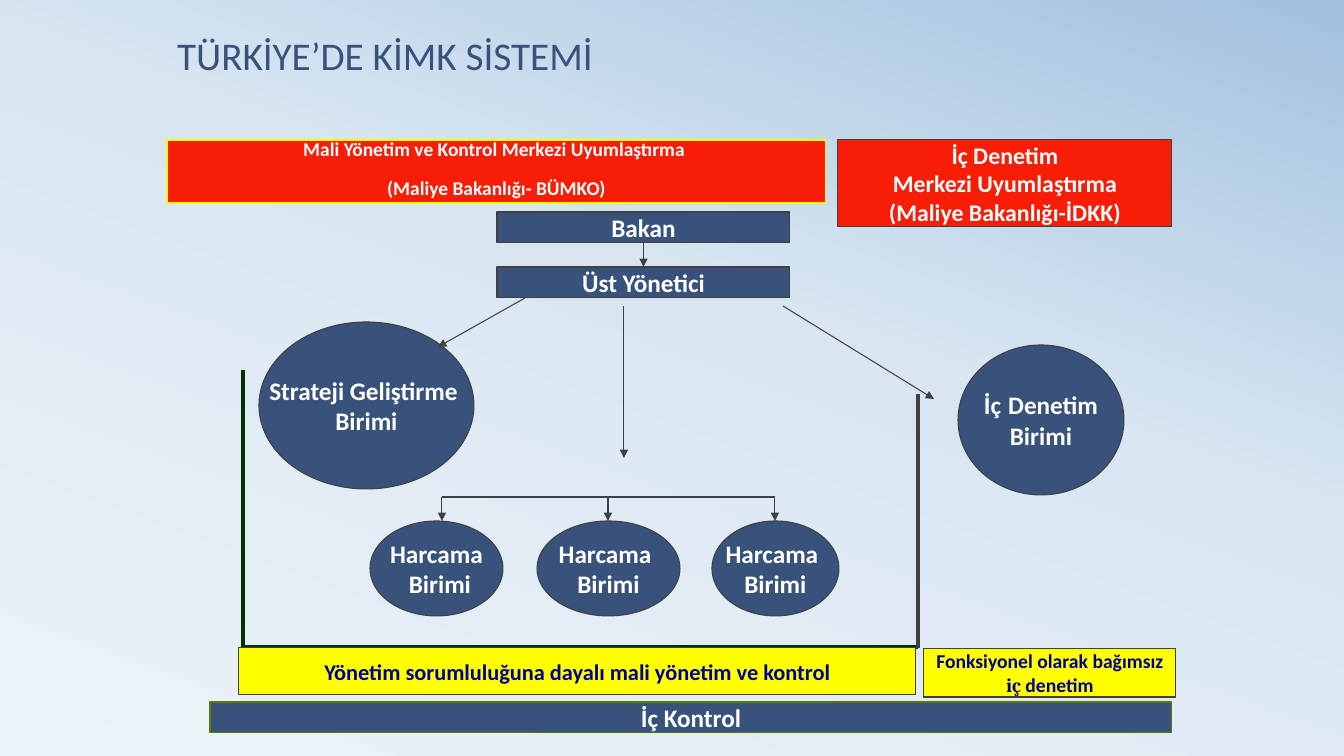
from copy import deepcopy

from lxml import etree
from pptx import Presentation
from pptx.dml.color import RGBColor
from pptx.enum import shapes, text
from pptx.oxml.ns import qn
from pptx.util import Pt

PX = 12192000 / 1344
NAVY, RED, YELLOW = "39527B", "F81D06", "FFFF00"
GREY, GREEN, INK, WHITE = "404040", "003300", "000099", "FFFFFF"
SPACE = (" ", 14, "Comic Neue")


def px(*lengths):
    return [round(length * PX) for length in lengths]


def paint(color, value):
    color.rgb = RGBColor.from_string(value)


class Chart:
    """Draws the organisation chart on one slide in one style."""

    font = "Calibri"

    def __init__(self, presentation):
        self.slide = presentation.slides.add_slide(presentation.slide_layouts[1])

    def background(self, stops, angle):
        fill = self.slide.background.fill
        fill.gradient()
        fill.gradient_angle = angle
        stop_list = self.slide.element.find(".//" + qn("a:gsLst"))
        while len(stop_list) < len(stops):
            stop_list.append(deepcopy(stop_list[0]))
        for stop, (position, color) in zip(fill.gradient_stops, stops):
            stop.position = position
            paint(stop.color, color)

    def place(self, shape, bounds):
        shape.left, shape.top, shape.width, shape.height = px(*bounds)

    def style(self, shape, fill, line):
        shape.fill.solid()
        paint(shape.fill.fore_color, fill)
        paint(shape.line.color, line)
        shape.line.width = Pt(0.75)

    def add_lines(self, frame, lines, size, color, bold=True, align=text.PP_ALIGN.CENTER):
        """Each line is a string or a list of (text, size, font) runs."""
        for number, line in enumerate(lines):
            paragraph = frame.add_paragraph() if number else frame.paragraphs[0]
            paragraph.alignment = align
            runs = [(line, size, self.font)] if isinstance(line, str) else line
            for words, points, font in runs:
                run = paragraph.add_run()
                run.text = words
                run.font.name, run.font.size, run.font.bold = font, Pt(points), bold
                paint(run.font.color, color)

    def title(self, bounds, words):
        shape = self.slide.shapes.title
        self.place(shape, bounds)
        frame = shape.text_frame
        frame.auto_size = text.MSO_AUTO_SIZE.NONE
        frame.vertical_anchor = text.MSO_ANCHOR.BOTTOM
        self.add_lines(frame, [words], 28, NAVY, False, text.PP_ALIGN.LEFT)
        frame.paragraphs[0].line_spacing = 0.8

    def body(self, bounds, lines):
        shape = self.slide.placeholders[1]
        self.place(shape, bounds)
        self.style(shape, RED, YELLOW)
        frame = shape.text_frame
        frame.auto_size = text.MSO_AUTO_SIZE.NONE
        frame.vertical_anchor = text.MSO_ANCHOR.TOP
        self.add_lines(frame, lines, 13.9, WHITE)
        for paragraph in frame.paragraphs:
            paragraph.line_spacing = 0.6
            paragraph.space_before = Pt(18)
            properties = paragraph._p.get_or_add_pPr()
            indent, = px(30)
            properties.set("marL", str(indent))
            properties.set("indent", str(-indent))
            etree.SubElement(properties, qn("a:buNone"))

    def node(self, kind, bounds, lines, fill=NAVY, color=WHITE, size=18, line=GREY):
        shape = self.slide.shapes.add_shape(kind, *px(*bounds))
        shape.shadow.inherit = False
        self.style(shape, fill, line)
        frame = shape.text_frame
        frame.word_wrap = False
        frame.vertical_anchor = text.MSO_ANCHOR.MIDDLE
        self.add_lines(frame, lines, size, color)
        return shape

    def box(self, *args, **options):
        return self.node(shapes.MSO_SHAPE.RECTANGLE, *args, **options)

    def oval(self, *args, **options):
        return self.node(shapes.MSO_SHAPE.OVAL, *args, **options)

    def line(self, start, end, color=GREY, width=0.75, arrow=False):
        connector = self.slide.shapes.add_connector(
            shapes.MSO_CONNECTOR.STRAIGHT, *px(*start, *end))
        paint(connector.line.color, color)
        connector.line.width = Pt(width)
        if arrow:
            outline = connector._element.spPr.find(qn("a:ln"))
            etree.SubElement(outline, qn("a:tailEnd"), type="triangle")
        etree.SubElement(connector._element.spPr, qn("a:effectLst"))
        return connector

    def arrow(self, start, end, width=0.75):
        return self.line(start, end, width=width, arrow=True)


def main():
    presentation = Presentation()
    presentation.slide_width, presentation.slide_height = px(1344, 756)
    chart = Chart(presentation)
    chart.background([(0, "ECF3F8"), (0.58, "D9E6F2"), (1, "A1C1DE")], 70)

    chart.title((167, 21, 814, 62), "TÜRKİYE’DE KİMK SİSTEMİ")
    chart.body((167, 140, 659, 63), ["Mali Yönetim ve Kontrol Merkezi Uyumlaştırma ",
                                     "(Maliye Bakanlığı- BÜMKO)"])
    chart.box((838, 140, 334, 87), ["İç Denetim", "Merkezi Uyumlaştırma",
                                    "(Maliye Bakanlığı-İDKK)"], fill=RED, size=17)

    minister = chart.box((497, 212, 293, 31), ["Bakan"])
    manager = chart.box((497, 267, 293, 31), ["Üst Yönetici"])
    command = chart.arrow((644, 243), (644, 267))
    command.begin_connect(minister, 2)
    command.end_connect(manager, 0)

    chart.oval((259, 322, 215, 167), ["Strateji Geliştirme ", "Birimi"])
    chart.oval((958, 345, 166, 150), [
        [("İç", 18, chart.font), SPACE, ("Denetim", 18, chart.font)], "Birimi"])

    # Frame around the management responsibility area
    chart.line((243, 370), (243, 656), GREEN, 2.25)
    chart.line((243, 647), (918, 647), GREEN, 2.25)
    chart.line((918, 648), (918, 394), GREY, 2.25)

    # Spending units under one shared bar
    name = ("Harcama", 18, chart.font)
    unit = ("Birimi", 18, chart.font)
    chart.oval((370, 521, 133, 95), [[name], [SPACE, unit]])
    for left, width in ((537, 143), (712, 127)):
        chart.oval((left, 521, width, 95), [[name, SPACE], [unit]])
    chart.line((442, 497), (775, 497), width=1.5)
    for x, width in ((442, 0.75), (608, 1), (775, 0.75)):
        chart.arrow((x, 497), (x, 521), width)

    for start, end in (((525, 298), (438, 347)),
                       ((624, 306), (624, 458)),
                       ((783, 306), (934, 399))):
        chart.arrow(start, end)

    chart.box((239, 648, 677, 47), ["Yönetim sorumluluğuna dayalı mali yönetim ve kontrol"],
              fill=YELLOW, color=INK, size=16)
    chart.box((924, 648, 252, 49), [
        "Fonksiyonel olarak bağımsız",
        [("iç ", 14, "Cambria"), ("denetim", 14, chart.font)],
    ], fill=YELLOW, color=INK, size=14)
    chart.box((210, 702, 962, 31), ["İç Kontrol"], line="5A7A00")

    presentation.save("out.pptx")


if __name__ == "__main__":
    main()
